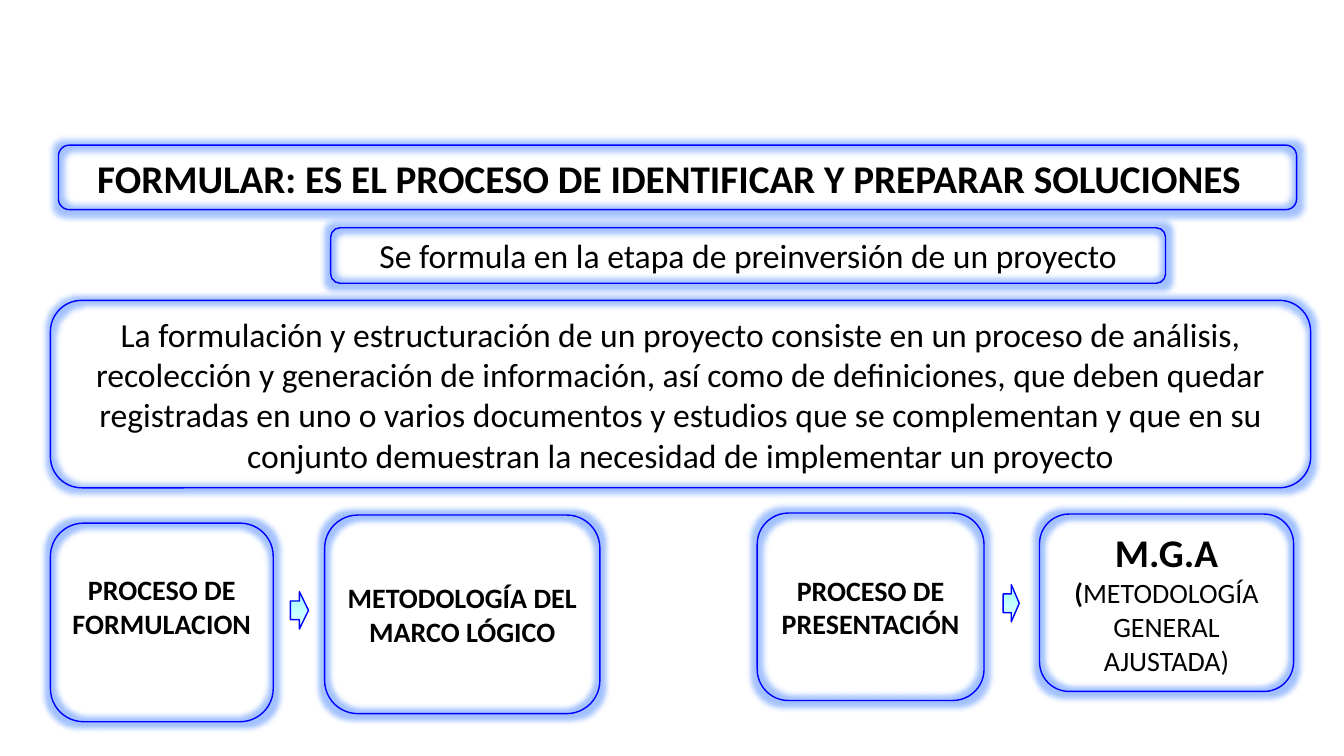
from lxml import etree
from pptx import Presentation
from pptx.dml.color import RGBColor
from pptx.enum.shapes import MSO_SHAPE
from pptx.enum.text import MSO_ANCHOR, PP_ALIGN
from pptx.oxml.ns import qn
from pptx.util import Inches, Pt

ROUND = MSO_SHAPE.FLOWCHART_ALTERNATE_PROCESS
ARROW = MSO_SHAPE.RIGHT_ARROW
MIDDLE = MSO_ANCHOR.MIDDLE
CENTER = PP_ALIGN.CENTER


def color(code):
    return RGBColor.from_string(code)


class Deck:
    font = "Calibri"
    ink = "000000"
    edge = "0000FF"
    halo = "6699FF"
    tints = ("A0FFFF", "E3FFFF")

    def __init__(self):
        self.prs = Presentation()
        self.prs.slide_width = Inches(13.33)
        self.prs.slide_height = Inches(7.5)
        self.slide = self.prs.slides.add_slide(self.prs.slide_layouts[6])

    def shape(self, kind, place):
        item = self.slide.shapes.add_shape(kind, *map(Inches, place))
        item.shadow.inherit = False
        item.line.color.rgb = color(self.edge)
        item.line.width = Pt(1)
        return item

    def glow(self, item):
        effects = item.element.spPr.find(qn("a:effectLst"))
        glow = etree.SubElement(effects, qn("a:glow"), rad=str(Pt(8)))
        tint = etree.SubElement(glow, qn("a:srgbClr"), val=self.halo)
        etree.SubElement(tint, qn("a:alpha"), val="60000")

    def box(self, place, runs, right=0.1, bottom=0.05):
        """Add a glowing box; each run is (text, size, bold)."""
        item = self.shape(ROUND, place)
        item.fill.background()
        self.glow(item)
        frame = item.text_frame
        frame.word_wrap = True
        frame.vertical_anchor = MIDDLE
        frame.margin_right = Inches(right)
        frame.margin_bottom = Inches(bottom)
        para = frame.paragraphs[0]
        para.alignment = CENTER
        for text, size, bold in runs:
            run = para.add_run()
            run.text = text
            run.font.name = self.font
            run.font.size = Pt(size)
            run.font.bold = bold
            run.font.color.rgb = color(self.ink)

    def arrow(self, place):
        fill = self.shape(ARROW, place).fill
        fill.gradient()
        fill.gradient_angle = 270
        for stop, tint in zip(fill.gradient_stops, self.tints):
            stop.color.rgb = color(tint)


def main():
    deck = Deck()

    # Definition, from heading to detail
    deck.box((0.58, 1.44, 12.28, 0.64),
             [("FORMULAR: ES EL PROCESO DE IDENTIFICAR Y PREPARAR SOLUCIONES", 28, True)],
             right=0.27)
    deck.box((3.28, 2.26, 8.28, 0.55),
             [("Se formula en la etapa de preinversión de un proyecto", 24, False)])
    deck.box((0.5, 2.98, 12.5, 1.86),
             [("La formulación y estructuración de un proyecto consiste en un proceso "
               "de análisis, recolección y generación de información, así como de "
               "definiciones, que deben quedar registradas en uno o varios documentos "
               "y estudios que se complementan y que en su conjunto demuestran la "
               "necesidad de implementar un proyecto", 24, False)])

    # Formulation and its method
    deck.box((0.5, 5.19, 2.21, 1.97), [("PROCESO DE FORMULACION", 20, True)],
             bottom=0.37)
    deck.arrow((2.88, 5.87, 0.18, 0.37))
    deck.box((3.22, 5.11, 2.73, 1.97), [("METODOLOGÍA DEL MARCO LÓGICO", 20, True)])

    # Presentation and its method
    deck.box((7.51, 5.09, 2.25, 1.86), [("PROCESO DE PRESENTACIÓN", 20, True)])
    deck.arrow((9.95, 5.8, 0.16, 0.37))
    deck.box((10.31, 5.1, 2.52, 1.76),
             [("M.G.A ", 28, True), ("(", 20, True),
              ("METODOLOGÍA GENERAL AJUSTADA)", 20, False)])

    deck.prs.save("out.pptx")


if __name__ == "__main__":
    main()
